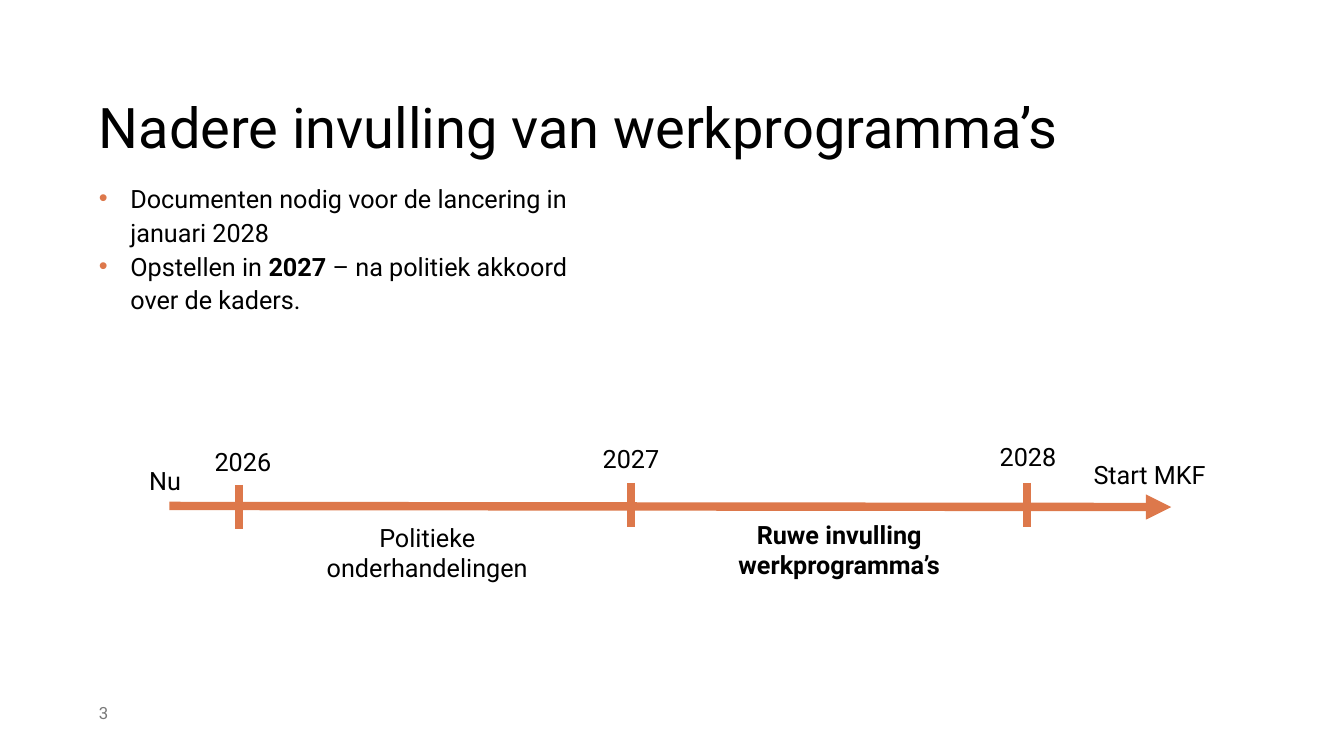
from lxml.etree import SubElement
from pptx import Presentation
from pptx.dml.color import RGBColor
from pptx.enum.shapes import MSO_CONNECTOR
from pptx.enum.text import MSO_ANCHOR, MSO_AUTO_SIZE, PP_ALIGN
from pptx.oxml.ns import qn
from pptx.util import Pt

FONT = "Roboto"
COLORS = {"text": "000000", "accent": "DD784B", "number": "797979"}

TITLE = "Nadere invulling van werkprogramma’s"
# Each bullet is a list of (text, bold) runs
BULLETS = [
    [("Documenten nodig voor de lancering in januari 2028", False)],
    [("Opstellen in ", False), ("2027", True),
     (" – na politiek akkoord over de kaders.", False)],
]
NUMBER = "3"

# Timeline: (text, left, top, width)
ENDS = [("Nu", 99.4, 329, 115), ("Start MKF", 774, 324.7, 115)]
# (year, label left, label top, tick x, tick top)
YEARS = [
    ("2026", 146.2, 315.4, 170.6, 346.3),
    ("2027", 423.4, 313.2, 450.7, 344.9),
    ("2028", 707, 311.8, 733.7, 344.9),
]
# (text, left, top, width, bold)
PHASES = [
    ("Politieke onderhandelingen", 198.7, 369.4, 213, False),
    ("Ruwe invulling werkprogramma’s", 484.6, 367.2, 229.7, True),
]
AXIS = (121, 361.4, 836.6, 362.2)
TICK = 31.7
LEFT, WIDTH = 70.6, 751


def add_run(para, text, size, bold=False, color="text"):
    run = para.add_run()
    run.text = text
    font = run.font
    font.name, font.size, font.bold = FONT, Pt(size), bold
    font.color.rgb = RGBColor.from_string(COLORS[color])


def place(shape, left, top, width, height):
    shape.left, shape.top = Pt(left), Pt(top)
    shape.width, shape.height = Pt(width), Pt(height)


def trim(frame, anchor):
    """Remove the margins and fix the anchor of a text frame."""
    frame.margin_left = frame.margin_right = 0
    frame.margin_top = frame.margin_bottom = 0
    frame.vertical_anchor = anchor
    frame.auto_size = MSO_AUTO_SIZE.NONE
    frame.word_wrap = True


def add_label(shapes, text, left, top, width, height=29, bold=False,
              align=PP_ALIGN.LEFT):
    box = shapes.add_textbox(Pt(left), Pt(top), Pt(width), Pt(height))
    box.text_frame.word_wrap = True
    para = box.text_frame.paragraphs[0]
    para.alignment = align
    add_run(para, text, 18, bold)


def add_line(shapes, *ends):
    line = shapes.add_connector(MSO_CONNECTOR.STRAIGHT, *map(Pt, ends))
    line.line.width = Pt(6)
    line.line.color.rgb = RGBColor.from_string(COLORS["accent"])
    SubElement(line._element.spPr, qn("a:effectLst"))
    return line


def add_bullet(para):
    props = para._p.get_or_add_pPr()
    props.set("marL", str(Pt(22.5)))
    props.set("indent", str(-Pt(22.5)))
    color = SubElement(props, qn("a:buClr"))
    SubElement(color, qn("a:srgbClr"), val=COLORS["accent"])
    SubElement(props, qn("a:buFont"), typeface="Arial")
    SubElement(props, qn("a:buChar"), char="•")


def fill_title(shape):
    place(shape, LEFT, 71.3, WIDTH, 44)
    trim(shape.text_frame, MSO_ANCHOR.TOP)
    para = shape.text_frame.paragraphs[0]
    para.alignment = PP_ALIGN.LEFT
    para.line_spacing = 0.9
    add_run(para, TITLE, 40)


def fill_body(shape):
    place(shape, LEFT, 128.2, WIDTH, 337.7)
    frame = shape.text_frame
    trim(frame, MSO_ANCHOR.TOP)
    props = frame._txBody.bodyPr
    props.set("numCol", "2")
    props.set("spcCol", str(Pt(36.7)))
    for i, runs in enumerate(BULLETS):
        para = frame.add_paragraph() if i else frame.paragraphs[0]
        add_bullet(para)
        para.line_spacing = 1.12
        para.space_before = Pt(0)
        for text, bold in runs:
            add_run(para, text, 18, bold)


def add_timeline(slide):
    shapes = slide.shapes.add_group_shape().shapes
    axis = add_line(shapes, *AXIS)
    SubElement(axis.line._get_or_add_ln(), qn("a:tailEnd"), type="triangle")
    for year, left, top, x, y in YEARS:
        add_line(shapes, x, y, x, y + TICK)
        add_label(shapes, year, left, top, 57.6)
    for end in ENDS:
        add_label(shapes, *end)
    for text, left, top, width, bold in PHASES:
        add_label(shapes, text, left, top, width, 51, bold, PP_ALIGN.CENTER)


def main():
    deck = Presentation()
    deck.slide_width, deck.slide_height = Pt(960), Pt(540)
    slide = deck.slides.add_slide(deck.slide_layouts[1])
    fill_title(slide.shapes.title)
    fill_body(slide.placeholders[1])
    number = slide.shapes.add_textbox(Pt(LEFT), Pt(501.8), Pt(28), Pt(14.4))
    trim(number.text_frame, MSO_ANCHOR.MIDDLE)
    add_run(number.text_frame.paragraphs[0], NUMBER, 12, color="number")
    add_timeline(slide)
    deck.save("out.pptx")


if __name__ == "__main__":
    main()
